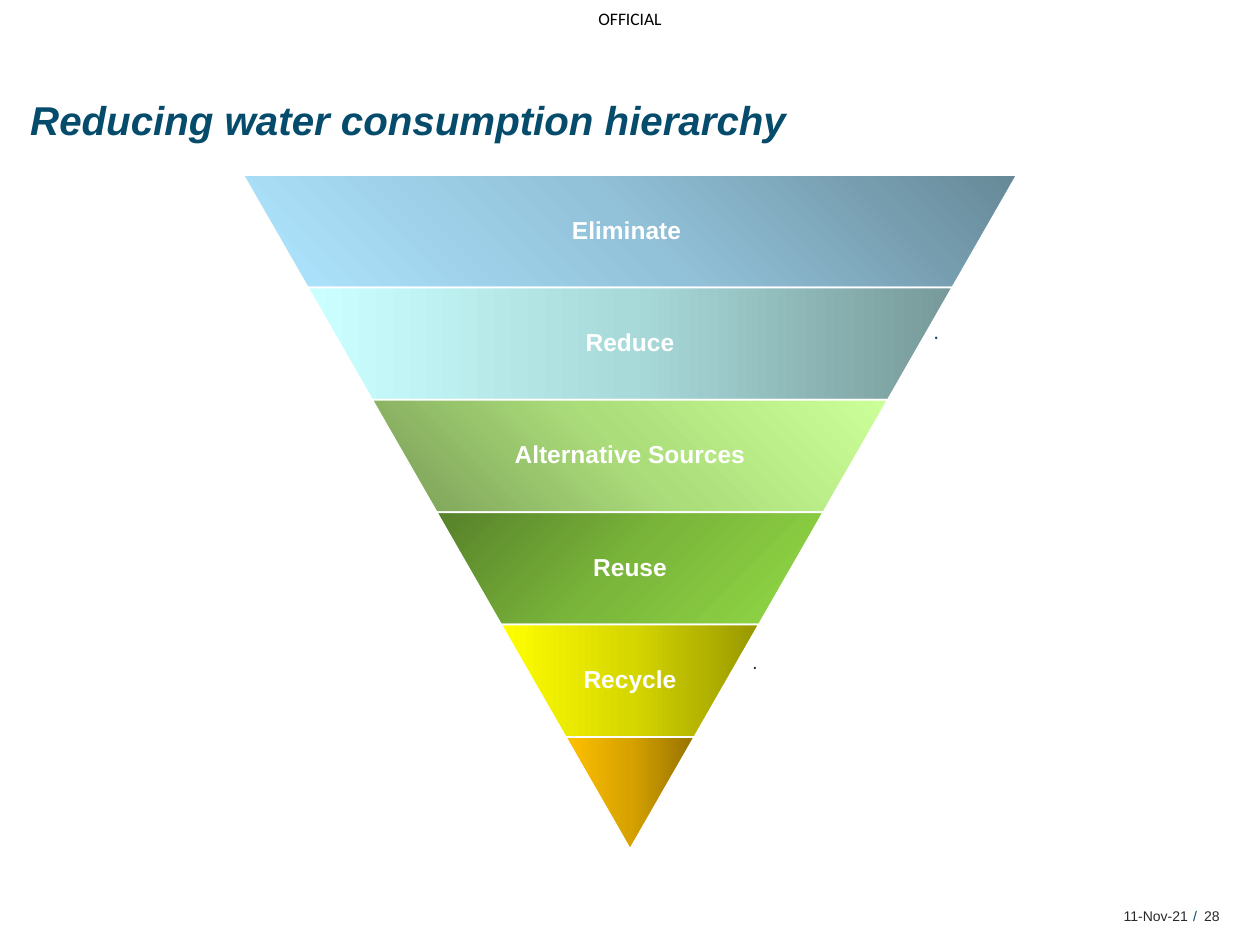
from lxml import etree
from pptx import Presentation
from pptx.dml.color import RGBColor
from pptx.enum.shapes import MSO_SHAPE
from pptx.enum.text import MSO_ANCHOR, PP_ALIGN
from pptx.oxml import parse_xml
from pptx.oxml.ns import nsdecls
from pptx.util import Inches, Pt

TRAPEZOID = MSO_SHAPE.TRAPEZOID
TOP, MIDDLE = MSO_ANCHOR.TOP, MSO_ANCHOR.MIDDLE
LEFT, CENTER, RIGHT = PP_ALIGN.LEFT, PP_ALIGN.CENTER, PP_ALIGN.RIGHT

NAVY = RGBColor(0x05, 0x4B, 0x6B)
CHARCOAL = RGBColor(0x29, 0x29, 0x29)
BLACK = RGBColor(0, 0, 0)
WHITE = RGBColor(0xFF, 0xFF, 0xFF)
BLUES = RGBColor(0x67, 0x89, 0x98), RGBColor(0x92, 0xC2, 0xD9), RGBColor(0xAF, 0xE6, 0xFF)
AQUAS = RGBColor(0x77, 0x99, 0x99), RGBColor(0xA9, 0xDA, 0xDA), RGBColor(0xCC, 0xFF, 0xFF)
LIMES = RGBColor(0x79, 0x9C, 0x56), RGBColor(0xAC, 0xDD, 0x7B), RGBColor(0xCC, 0xFF, 0x99)
GREENS = RGBColor(0x57, 0x81, 0x2A), RGBColor(0x7B, 0xB7, 0x3B), RGBColor(0x92, 0xDA, 0x46)
YELLOWS = RGBColor(0x97, 0x97, 0x00), RGBColor(0xD7, 0xD7, 0x00), RGBColor(0xFF, 0xFF, 0x00)
AMBERS = RGBColor(0x97, 0x72, 0x00), RGBColor(0xD7, 0xA2, 0x00), RGBColor(0xFF, 0xC0, 0x00)

TIERS = [
    ("Eliminate ", BLUES, (100, 0)),
    ("Reduce", AQUAS, None),
    ("Alternative Sources", LIMES, (0, 100)),
    ("Reuse", GREENS, (0, 0)),
    ("Recycle", YELLOWS, None),
    ("", AMBERS, None),
]


def add_text(shapes, text, x, y, w, h, size, color, font="Arial", bold=False, italic=False,
             align=LEFT, anchor=MIDDLE, inset=(0, 0), spacing=None):
    """Add a one-paragraph text box, measured in inches."""
    s = shapes.add_textbox(Inches(x), Inches(y), Inches(w), Inches(h))
    tf = s.text_frame
    tf.word_wrap = True
    tf.vertical_anchor = anchor
    tf.margin_left = tf.margin_right = Inches(inset[0])
    tf.margin_top = tf.margin_bottom = Inches(inset[1])
    p = tf.paragraphs[0]
    p.alignment = align
    p.line_spacing = spacing
    r = p.add_run()
    r.text = text
    r.font.name, r.font.size = font, Pt(size)
    r.font.bold, r.font.italic = bold, italic
    r.font.color.rgb = color


def set_gradient(s, colors, corner):
    """Fill a shape with a gradient from a corner, or from right to left."""
    grad = parse_xml(f'<a:gradFill {nsdecls("a")} rotWithShape="0"><a:gsLst/></a:gradFill>')
    for i, color in enumerate(colors):
        grad[0].append(parse_xml(
            f'<a:gs {nsdecls("a")} pos="{i * 50000}"><a:srgbClr val="{color}"/></a:gs>'))
    if corner:
        x, y = corner
        direction = etree.fromstring(
            f'<a:path {nsdecls("a")} path="circle"><a:fillToRect l="{x * 1000}" t="{y * 1000}" '
            f'r="{(100 - x) * 1000}" b="{(100 - y) * 1000}"/></a:path>')
    else:
        direction = etree.fromstring(f'<a:lin {nsdecls("a")} ang="10800000" scaled="0"/>')
    grad.append(direction)
    s.element.spPr.insert(2, grad)


def add_pyramid(slide, x, y, w, h):
    """Draw the inverted pyramid of tiers inside the given box."""
    shapes = slide.shapes.add_group_shape().shapes
    count = len(TIERS)
    tier_h = h / count
    for i, (label, colors, corner) in enumerate(TIERS):
        tier_w = w * (count - i) / count
        top = y + i * tier_h
        s = shapes.add_shape(TRAPEZOID, Inches(x + (w - tier_w) / 2), Inches(top),
                             Inches(tier_w), Inches(tier_h))
        s.rotation = 180
        s.adjustments[0] = w / 2 / h
        s.shadow.inherit = False
        set_gradient(s, colors, corner)
        s.line.color.rgb = WHITE
        s.line.width = Pt(1)
        if label:
            text_w = 0.65 * tier_w
            add_text(shapes, label, x + (w - text_w) / 2, top, text_w, tier_h, 14, WHITE,
                     bold=True, align=CENTER, inset=(0.02, 0.02), spacing=0.9)


def add_footer(slide, x, y, w, h):
    """Place the date, slash and page number along the given box."""
    add_text(slide.shapes, "/", x + 2.37, y, 0.04, h, 8, NAVY)
    add_text(slide.shapes, "11-Nov-21", x, y, 2.33, h, 8, CHARCOAL, align=RIGHT)
    add_text(slide.shapes, "28", x + w - 0.16, y, 0.16, h, 8, CHARCOAL, align=RIGHT)


def main():
    """Build the slide and save it."""
    prs = Presentation()
    prs.slide_width, prs.slide_height = Inches(10), Inches(7.5)
    slide = prs.slides.add_slide(prs.slide_layouts[6])
    add_text(slide.shapes, "OFFICIAL", 4.6, 0, 0.8, 0.29, 10, BLACK, font="Calibri", align=CENTER)
    add_footer(slide, 7.1, 7.17, 2.58, 0.2)
    add_pyramid(slide, 1.93, 1.39, 6.14, 5.35)
    add_text(slide.shapes, ".", 5.88, 5.11, 2.6, 0.29, 11, CHARCOAL, italic=True,
             anchor=TOP, inset=(0.1, 0.05))
    add_text(slide.shapes, ".", 7.31, 2.48, 2.6, 0.3, 12, NAVY, anchor=TOP, inset=(0.1, 0.05))
    add_text(slide.shapes, "Reducing water consumption hierarchy", 0.24, 0.76, 9.04, 0.57, 23,
             NAVY, bold=True, italic=True, anchor=TOP)
    prs.save("out.pptx")


if __name__ == "__main__":
    main()
